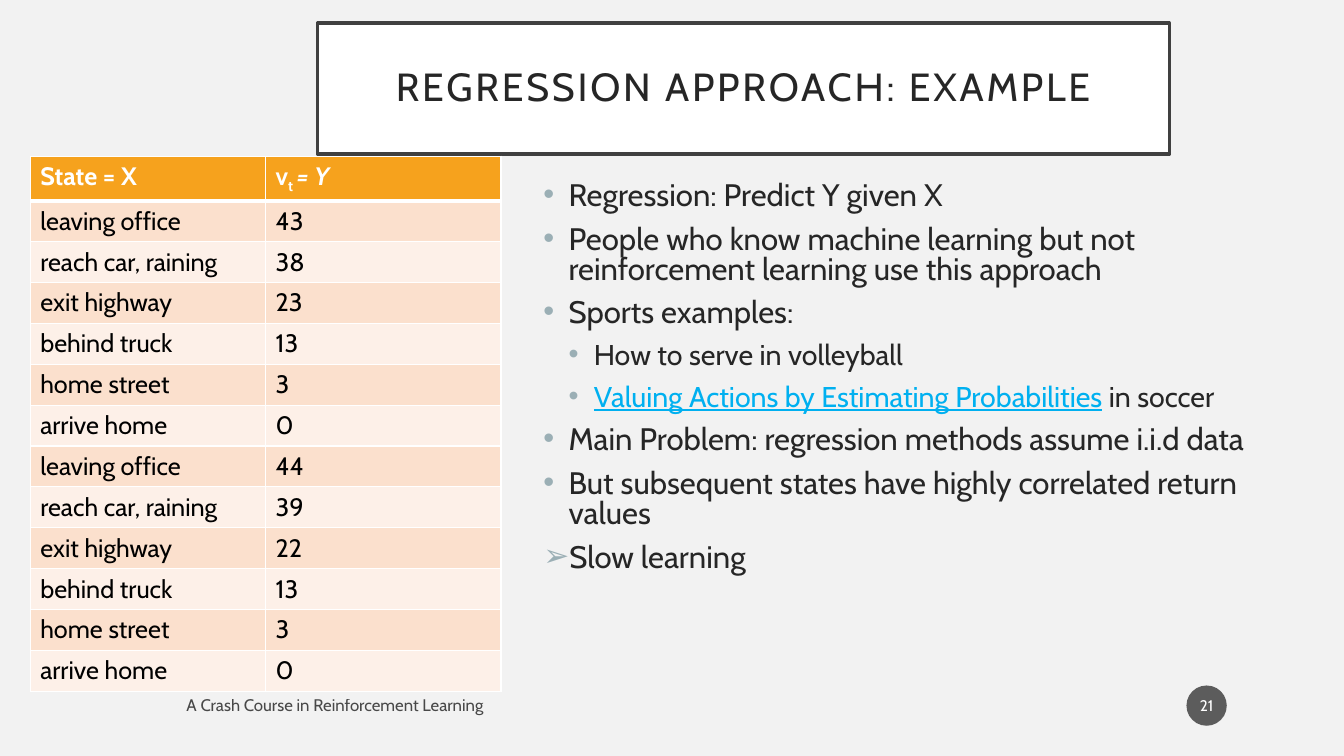
import dataclasses

import lxml.etree
import pptx
import pptx.dml.color
import pptx.enum.shapes
import pptx.enum.text
import pptx.oxml.ns
import pptx.util

Pt = pptx.util.Pt
Inches = pptx.util.Inches
qn = pptx.oxml.ns.qn
ALIGN = pptx.enum.text.PP_ALIGN
MIDDLE = pptx.enum.text.MSO_ANCHOR.MIDDLE


@dataclasses.dataclass(frozen=True)
class Theme:
    """Colours, font and type sizes of the deck."""
    font: str = "Cabin"
    page: str = "F2F2F2"
    ink: str = "262626"
    black: str = "000000"
    white: str = "FFFFFF"
    frame: str = "404040"
    accent: str = "F6A21D"
    bands: tuple = ("FBE0CD", "FDF0E8")
    bullet: str = "9BAFB5"
    link: str = "00B0F0"
    badge: str = "1D1D1D"
    alpha: int = 70
    title_pt: float = 28
    body_pt: tuple = (22.2, 20.4)
    table_pt: float = 18
    footer_pt: float = 12
    badge_pt: float = 11


THEME = Theme()
WIDTH, HEIGHT = Inches(13.33), Inches(7.5)

TRIP = ["leaving office", "reach car, raining", "exit highway",
        "behind truck", "home street", "arrive home"]
RETURNS = [43, 38, 23, 13, 3, 0, 44, 39, 22, 13, 3, 0]
HEADER = [[("State = X", {})],
          [("v", {}), ("t ", {"baseline": -25000}), ("= Y", {"italic": True})]]
POINTS = [
    (0, "•", [("Regression: Predict Y given X", {})]),
    (0, "•", [("People who know machine learning but not reinforcement "
               "learning use this approach", {})]),
    (0, "•", [("Sports examples:", {})]),
    (1, "•", [("How to serve in volleyball", {})]),
    (1, "•", [("Valuing Actions by Estimating Probabilities",
               {"color": THEME.link, "underline": True}), (" in soccer", {})]),
    (0, "•", [("Main Problem: regression methods assume i.i.d data", {})]),
    (0, "•", [("But subsequent states have highly correlated return values", {})]),
    (0, "➢", [("Slow learning", {})]),
]


def share(x, y, w, h):
    """Turn percentages of the slide into a left, top, width, height box."""
    return [int(part * side / 100)
            for part, side in zip((x, y, w, h), (WIDTH, HEIGHT) * 2)]


def set_all(target, values):
    """Set each attribute in a dict on an object."""
    for name, value in values.items():
        setattr(target, name, value)


def place(shape, box):
    """Move a shape into a box."""
    set_all(shape, dict(zip(("left", "top", "width", "height"), box)))


def paint(fill, color, alpha=100):
    """Apply a solid colour with a percentage of opacity."""
    fill.solid()
    fill.fore_color.rgb = pptx.dml.color.RGBColor.from_string(color)
    return alpha


def fade(element, alpha):
    """Give every colour inside an element an opacity percentage."""
    for clr in element.iter(qn("a:srgbClr")):
        lxml.etree.SubElement(clr, qn("a:alpha"), val=str(alpha * 1000))


def add_runs(p, runs, size, color, bold=False):
    """Add styled runs to a paragraph."""
    for text, style in runs:
        style = {"name": THEME.font, "size": Pt(size), "bold": bold, **style}
        r = p.add_run()
        r.text = text
        paint(r.font.fill, style.pop("color", color))
        baseline = style.pop("baseline", None)
        set_all(r.font, style)
        if baseline:
            r._r.get_or_add_rPr().set("baseline", str(baseline))


def add_bullet(p, level, char):
    """Give a paragraph its hanging bullet."""
    pPr = p._p.get_or_add_pPr()
    pPr.set("marL", str(Inches(0.25 * (level + 1))))
    pPr.set("indent", str(Inches(-0.25)))
    clr = lxml.etree.SubElement(pPr, qn("a:buClr"))
    lxml.etree.SubElement(clr, qn("a:srgbClr"), val=THEME.bullet)
    lxml.etree.SubElement(pPr, qn("a:buFont"), typeface="Arial")
    lxml.etree.SubElement(pPr, qn("a:buChar"), char=char)


def add_title(s, box, text):
    """Fill the title placeholder as a framed panel."""
    sp = s.shapes.title
    place(sp, box)
    paint(sp.fill, THEME.white)
    paint(sp.line.fill, THEME.frame)
    sp.line.width = Pt(2.5)
    tf = sp.text_frame
    margins = ("margin_left", "margin_top", "margin_right", "margin_bottom")
    set_all(tf, {"vertical_anchor": MIDDLE, "word_wrap": True,
                 "auto_size": pptx.enum.text.MSO_AUTO_SIZE.NONE,
                 **dict.fromkeys(margins, Inches(0.2))})
    p = tf.paragraphs[0]
    set_all(p, {"alignment": ALIGN.CENTER, "line_spacing": 0.9})
    add_runs(p, [(text, {})], THEME.title_pt, THEME.ink)
    p.runs[0]._r.get_or_add_rPr().set("spc", "200")


def add_points(s, box, points):
    """Fill the body placeholder with a two-level list."""
    sp = s.placeholders[1]
    place(sp, box)
    tf = sp.text_frame
    set_all(tf, {"word_wrap": True,
                 "auto_size": pptx.enum.text.MSO_AUTO_SIZE.NONE})
    for i, (level, char, runs) in enumerate(points):
        p = tf.add_paragraph() if i else tf.paragraphs[0]
        set_all(p, {"level": level, "line_spacing": 0.8,
                    "space_before": Pt(10 if i else 0)})
        add_bullet(p, level, char)
        add_runs(p, runs, THEME.body_pt[level], THEME.ink)


def style_cell(cell, fill, bottom_pt):
    """Give a cell white rules and a fill."""
    tcPr = cell._tc.get_or_add_tcPr()
    for side, width in zip("LRTB", (1, 1, 1, bottom_pt)):
        ln = lxml.etree.SubElement(tcPr, qn("a:ln" + side), w=str(Pt(width)))
        solid = lxml.etree.SubElement(ln, qn("a:solidFill"))
        lxml.etree.SubElement(solid, qn("a:srgbClr"), val=THEME.white)
    paint(cell.fill, fill)


def add_returns_table(s, box, header, rows):
    """Add the table of states and returns with banded rows."""
    grid = [header] + [[[(str(value), {})] for value in row] for row in rows]
    table = s.shapes.add_table(len(grid), len(header), *box).table
    table.horz_banding = False
    for i, row in enumerate(grid):
        for j, runs in enumerate(row):
            cell = table.cell(i, j)
            head = i == 0
            style_cell(cell, THEME.accent if head else THEME.bands[(i - 1) % 2],
                       3 if head else 1)
            add_runs(cell.text_frame.paragraphs[0], runs, THEME.table_pt,
                     THEME.white if head else THEME.black, head)


def add_footer(s, box, text):
    """Add the course name at the foot of the slide."""
    sp = s.shapes.add_textbox(*box)
    tf = sp.text_frame
    set_all(tf, {"word_wrap": True, "vertical_anchor": MIDDLE})
    add_runs(tf.paragraphs[0], [(text, {})], THEME.footer_pt, THEME.black)
    fade(sp._element, THEME.alpha)


def add_badge(s, box, number):
    """Add the round slide number."""
    sp = s.shapes.add_shape(pptx.enum.shapes.MSO_SHAPE.OVAL, *box)
    sp.shadow.inherit = False
    paint(sp.fill, THEME.badge)
    fade(sp._element.spPr, THEME.alpha)
    sp.line.fill.background()
    tf = sp.text_frame
    set_all(tf, {"margin_left": Inches(0.02), "margin_right": Inches(0.02),
                 "vertical_anchor": MIDDLE, "word_wrap": True})
    p = tf.paragraphs[0]
    p.alignment = ALIGN.CENTER
    add_runs(p, [(number, {})], THEME.badge_pt, THEME.white)


def main():
    """Build and save the slide."""
    prs = pptx.Presentation()
    set_all(prs, {"slide_width": WIDTH, "slide_height": HEIGHT})
    s = prs.slides.add_slide(prs.slide_layouts[1])
    paint(s.background.fill, THEME.page)
    add_title(s, share(23.63, 3.07, 63.38, 17.33), "REGRESSION APPROACH: EXAMPLE")
    add_returns_table(s, share(2.25, 20.67, 35.03, 70.27), HEADER,
                      list(zip(TRIP * 2, RETURNS)))
    add_points(s, share(39.68, 23.47, 56.63, 53.2), POINTS)
    add_footer(s, share(13.13, 90.93, 48.38, 4.67),
               "A Crash Course in Reinforcement Learning")
    add_badge(s, share(88.28, 90.67, 3, 5.33), "21")
    prs.save("out.pptx")


if __name__ == "__main__":
    main()
